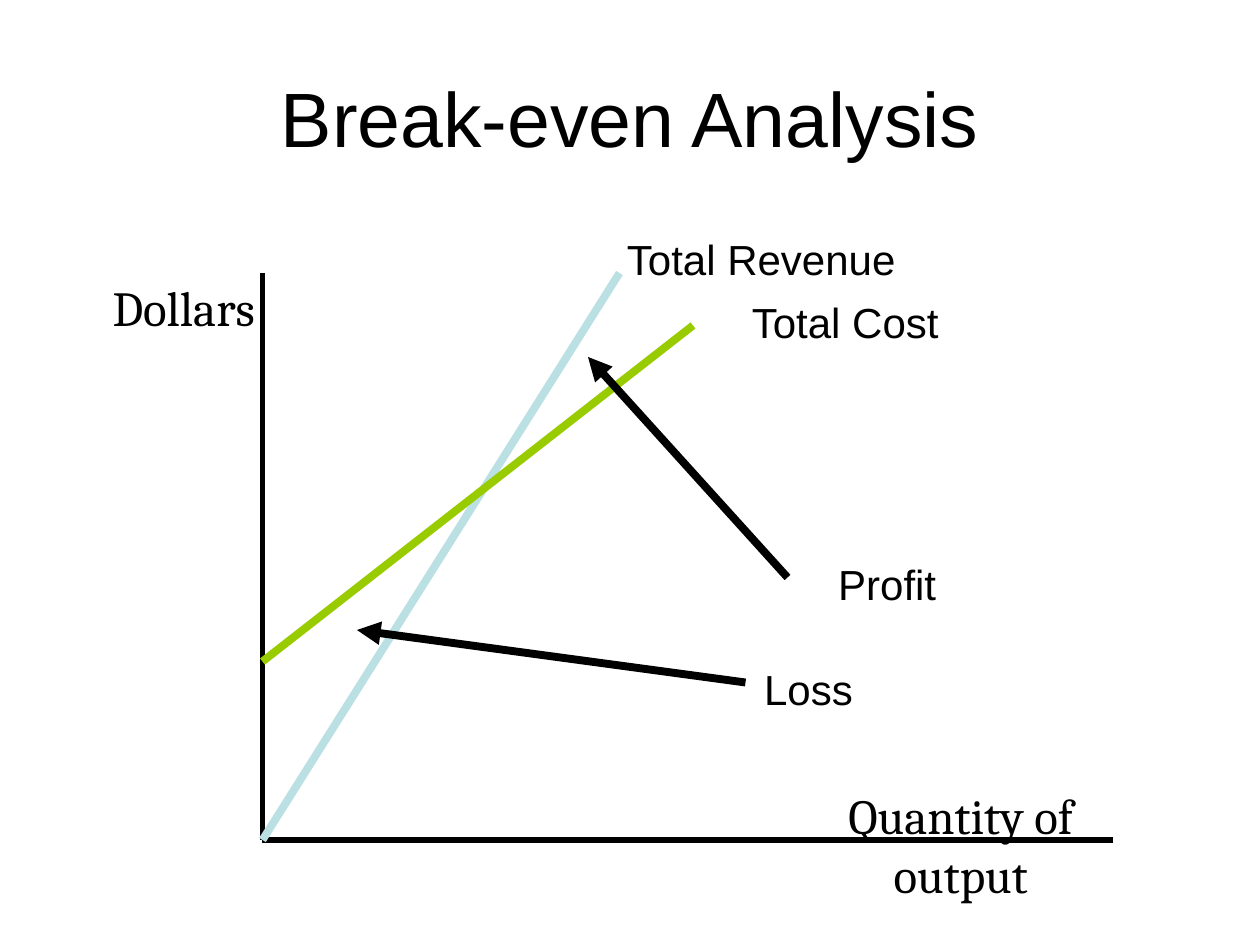
import pptx
import pptx.util
import pptx.dml.color
import pptx.enum.shapes
import pptx.enum.text
import pptx.oxml.ns
import lxml.etree

CELL = pptx.util.Inches(1) / 12
COLORS = {"ink": "000000", "revenue": "BBE0E3", "cost": "99CC00"}


def cells(*counts):
    return [pptx.util.Emu(round(n * CELL)) for n in counts]


def rgb(name):
    return pptx.dml.color.RGBColor.from_string(COLORS[name])


def format_text(tf, text, font, size, anchor):
    tf.text = text
    tf.word_wrap = True
    tf.vertical_anchor = anchor
    p = tf.paragraphs[0]
    p.alignment = pptx.enum.text.PP_ALIGN.CENTER
    r = p.runs[0]
    r.font.name = font
    r.font.size = pptx.util.Pt(size)
    r.font.color.rgb = rgb("ink")


def add_title(s, box, text):
    title = s.shapes.title
    title.left, title.top, title.width, title.height = cells(*box)
    format_text(title.text_frame, text, "Arial", 44,
                pptx.enum.text.MSO_ANCHOR.MIDDLE)


def add_line(s, start, end, color, width, arrow=False):
    line = s.shapes.add_connector(
        pptx.enum.shapes.MSO_CONNECTOR.STRAIGHT, *cells(*start, *end))
    line.line.color.rgb = rgb(color)
    line.line.width = pptx.util.Pt(width)
    sp_pr = line._element.spPr
    if arrow:
        lxml.etree.SubElement(sp_pr.find(pptx.oxml.ns.qn("a:ln")),
                              pptx.oxml.ns.qn("a:tailEnd"), type="triangle")
    lxml.etree.SubElement(sp_pr, pptx.oxml.ns.qn("a:effectLst"))


def add_label(s, box, text, font, size):
    sp = s.shapes.add_textbox(*cells(*box))
    format_text(sp.text_frame, text, font, size,
                pptx.enum.text.MSO_ANCHOR.BOTTOM)


def add_break_even_chart(s, box):
    left, top, width, height = box

    def at(col, row):
        return left + col, top + row

    origin = at(0, height)
    add_line(s, at(0, 0), origin, "ink", 3)
    add_line(s, origin, at(width, height), "ink", 3)
    add_line(s, origin, at(34, 0), "revenue", 4.5)
    add_line(s, at(0, 37), at(41, 5), "cost", 4.5)

    labels = [
        ("Quantity of output", 48, 51, 37, 9.6, "Cambria", 28),
        ("Dollars", -16, 0, 17, 6.6, "Cambria", 28),
        ("Total Revenue", 33, -5, 29, 6.6, "Arial", 24),
        ("Total Cost", 41, 1, 29, 6.6, "Arial", 24),
        ("Loss", 46, 37, 12, 5.6, "Arial", 24),
        ("Profit", 50, 27, 19, 5.6, "Arial", 24),
    ]
    for text, col, row, cols, rows, font, size in labels:
        add_label(s, (*at(col, row), cols, rows), text, font, size)

    add_line(s, at(46, 39), at(9, 34), "ink", 4.5, arrow=True)
    add_line(s, at(50, 29), at(31, 8), "ink", 4.5, arrow=True)


def main():
    prs = pptx.Presentation()
    prs.slide_width, prs.slide_height = cells(120, 90)
    s = prs.slides.add_slide(prs.slide_layouts[5])
    add_title(s, (6, 3.6, 108, 15), "Break-even Analysis")
    add_break_even_chart(s, (25, 26, 81, 54))
    prs.save("out.pptx")


if __name__ == "__main__":
    main()
